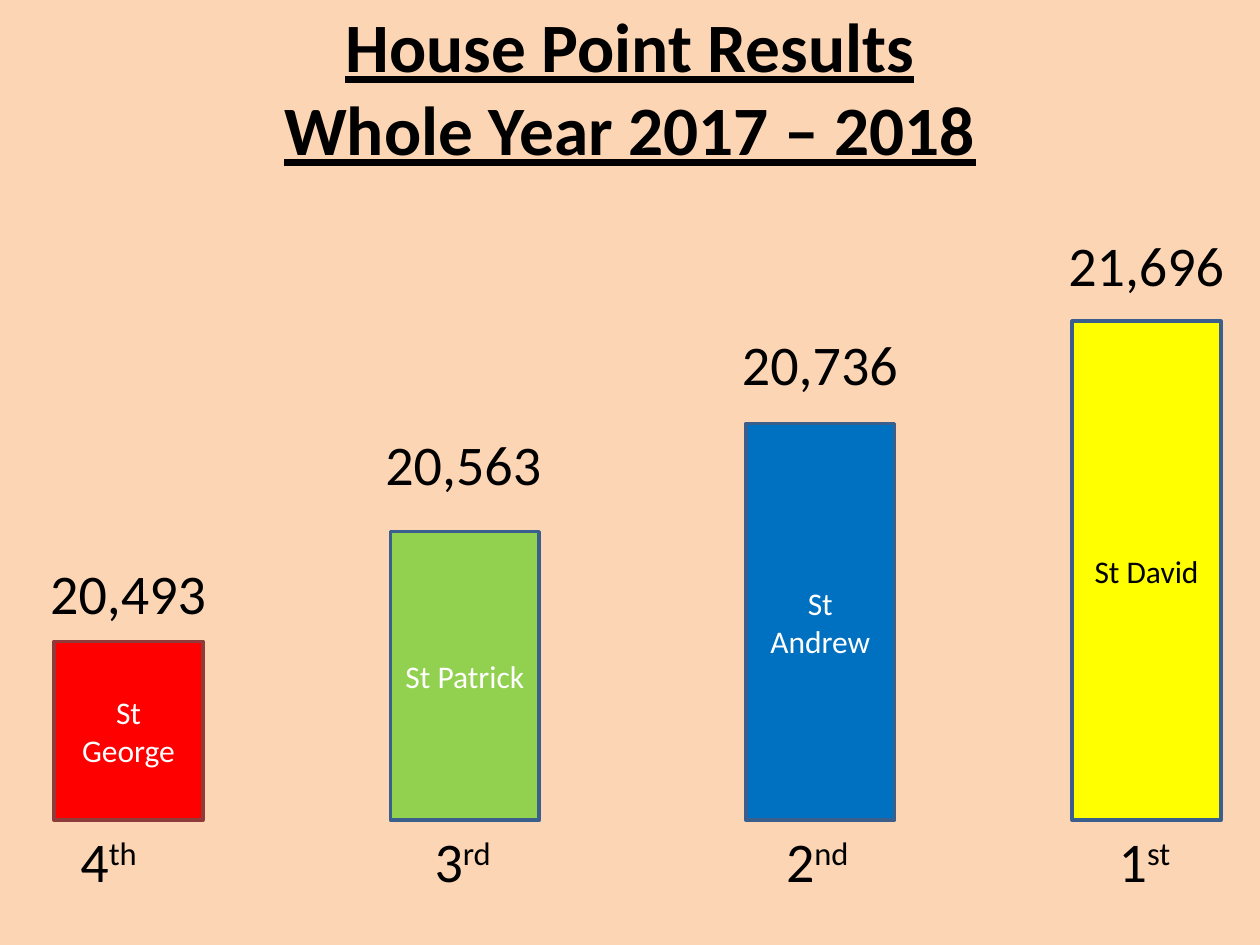
from pptx import Presentation
from pptx.dml.color import RGBColor
from pptx.enum.shapes import MSO_SHAPE
from pptx.enum.text import MSO_ANCHOR, MSO_AUTO_SIZE, PP_ALIGN
from pptx.util import Inches, Pt

RECTANGLE = MSO_SHAPE.RECTANGLE
MIDDLE = MSO_ANCHOR.MIDDLE
CENTER = PP_ALIGN.CENTER
FIT_SHAPE = MSO_AUTO_SIZE.SHAPE_TO_FIT_TEXT

PEACH = RGBColor(0xFC, 0xD5, 0xB5)
BLACK = RGBColor(0, 0, 0)
WHITE = RGBColor(0xFF, 0xFF, 0xFF)
RED = RGBColor(0xFF, 0, 0)
GREEN = RGBColor(0x92, 0xD0, 0x50)
BLUE = RGBColor(0, 0x70, 0xC0)
YELLOW = RGBColor(0xFF, 0xFF, 0)
DARK_RED = RGBColor(0x8E, 0x3B, 0x39)
DARK_BLUE = RGBColor(0x3A, 0x5F, 0x8C)

TITLE_LINES = ["House Point Results", "Whole Year 2017 – 2018"]

# house, points, place, suffix, fill, outline, text colour,
# bar left, bar top, points left, points top, place left, place width
HOUSES = [
    ("St George", "20,493", "4", "th", RED, DARK_RED, WHITE,
     0.43, 5.09, 0.3, 4.38, 0.54, 0.69),
    ("St Patrick", "20,563", "3", "rd", GREEN, DARK_BLUE, WHITE,
     3.1, 4.22, 2.96, 3.36, 3.35, 0.69),
    ("St Andrew", "20,736", "2", "nd", BLUE, DARK_BLUE, WHITE,
     5.92, 3.36, 5.79, 2.57, 6.14, 0.75),
    ("St David", "21,696", "1", "st", YELLOW, DARK_BLUE, BLACK,
     8.51, 2.55, 8.38, 1.78, 8.78, 0.64),
]
BASELINE = 6.51
BAR_WIDTH = 1.18
POINTS_WIDTH = 1.45
LABEL_HEIGHT = 0.64
TITLE_LINE_HEIGHT = 0.66


def add_span(para, text, size, color):
    span = para.add_run()
    span.text = text
    span.font.name = "Calibri"
    span.font.size = Pt(size)
    span.font.color.rgb = color
    return span


def add_title(page):
    box = page.shapes.add_textbox(Inches(0.75), Inches(0.21), Inches(8.5), Inches(1.61))
    frame = box.text_frame
    frame.word_wrap = True
    frame.vertical_anchor = MIDDLE
    # One line of extra bottom inset raises the title to the page top.
    frame.margin_bottom = Inches(0.05 + TITLE_LINE_HEIGHT)
    para = frame.paragraphs[0]
    para.alignment = CENTER
    for index, line in enumerate(TITLE_LINES):
        if index:
            para.add_line_break()
        span = add_span(para, line, 39.6, BLACK)
        span.font.bold = True
        span.font.underline = True


def add_label(page, left, top, width, text, suffix=""):
    """Add a large label, with an optional superscript suffix."""
    box = page.shapes.add_textbox(Inches(left), Inches(top), Inches(width), Inches(LABEL_HEIGHT))
    frame = box.text_frame
    frame.word_wrap = False
    frame.auto_size = FIT_SHAPE
    para = frame.paragraphs[0]
    add_span(para, text, 32, BLACK)
    if suffix:
        raised = add_span(para, suffix, 32, BLACK)
        raised._r.get_or_add_rPr().set("baseline", "30000")


def add_bar(page, left, top, house, fill, outline, color):
    bar = page.shapes.add_shape(RECTANGLE, Inches(left), Inches(top),
                                Inches(BAR_WIDTH), Inches(BASELINE - top))
    bar.shadow.inherit = False
    bar.fill.solid()
    bar.fill.fore_color.rgb = fill
    bar.line.color.rgb = outline
    bar.line.width = Pt(2)
    frame = bar.text_frame
    frame.word_wrap = True
    frame.vertical_anchor = MIDDLE
    para = frame.paragraphs[0]
    para.alignment = CENTER
    add_span(para, house, 18, color)


def main():
    deck = Presentation()
    deck.slide_width, deck.slide_height = Inches(10), Inches(7.5)
    page = deck.slides.add_slide(deck.slide_layouts[6])
    page.background.fill.solid()
    page.background.fill.fore_color.rgb = PEACH

    add_title(page)
    for (house, points, place, suffix, fill, outline, color, bar_left, bar_top,
         points_left, points_top, place_left, place_width) in HOUSES:
        add_label(page, place_left, BASELINE, place_width, place, suffix)
        add_label(page, points_left, points_top, POINTS_WIDTH, points)
        add_bar(page, bar_left, bar_top, house, fill, outline, color)
    deck.save("out.pptx")


if __name__ == "__main__":
    main()
